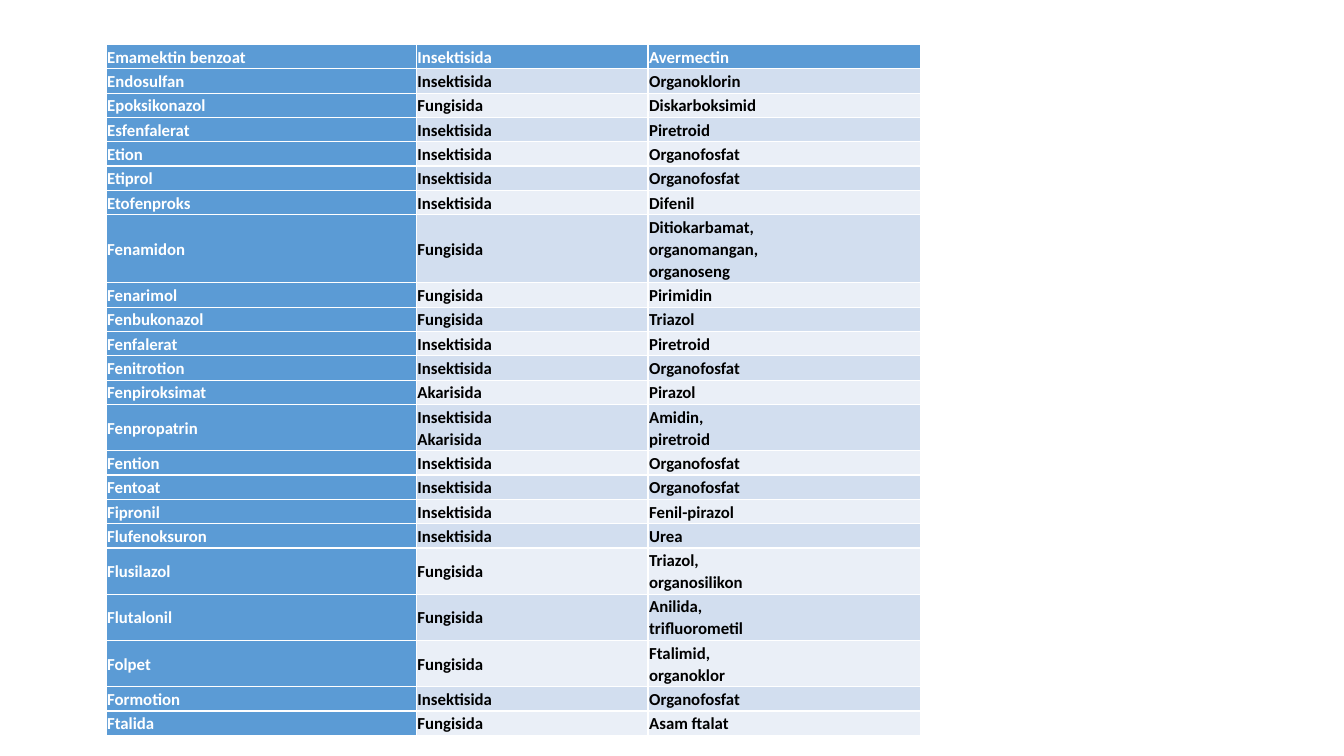
from pptx import Presentation
from pptx.dml.color import RGBColor
from pptx.enum.text import MSO_ANCHOR
from pptx.util import Cm, Pt

WHITE = RGBColor(0xFF, 0xFF, 0xFF)
BLACK = RGBColor(0x00, 0x00, 0x00)
BLUE = RGBColor(0x5B, 0x9B, 0xD5)
DARK_BAND = RGBColor(0xD2, 0xDE, 0xEF)
LIGHT_BAND = RGBColor(0xEA, 0xEF, 0xF7)

COLUMN_WIDTHS = (7.82, 5.84, 6.86)
FIRST_LINE_HEIGHT = 0.43
EXTRA_LINE_HEIGHT = 0.38
CELL_MARGIN = Cm(0.03)

PESTICIDES = [
    ("Emamektin benzoat", "Insektisida", "Avermectin"),
    ("Endosulfan", "Insektisida", "Organoklorin"),
    ("Epoksikonazol", "Fungisida", "Diskarboksimid"),
    ("Esfenfalerat", "Insektisida", "Piretroid"),
    ("Etion", "Insektisida", "Organofosfat"),
    ("Etiprol", "Insektisida", "Organofosfat"),
    ("Etofenproks", "Insektisida", "Difenil"),
    ("Fenamidon", "Fungisida", "Ditiokarbamat,\norganomangan,\norganoseng"),
    ("Fenarimol", "Fungisida", "Pirimidin"),
    ("Fenbukonazol", "Fungisida", "Triazol"),
    ("Fenfalerat", "Insektisida", "Piretroid"),
    ("Fenitrotion", "Insektisida", "Organofosfat"),
    ("Fenpiroksimat", "Akarisida", "Pirazol"),
    ("Fenpropatrin", "Insektisida\nAkarisida", "Amidin,\npiretroid"),
    ("Fention", "Insektisida", "Organofosfat"),
    ("Fentoat", "Insektisida", "Organofosfat"),
    ("Fipronil", "Insektisida", "Fenil-pirazol"),
    ("Flufenoksuron", "Insektisida", "Urea"),
    ("Flusilazol", "Fungisida", "Triazol,\norganosilikon"),
    ("Flutalonil", "Fungisida", "Anilida,\ntrifluorometil"),
    ("Folpet", "Fungisida", "Ftalimid,\norganoklor"),
    ("Formotion", "Insektisida", "Organofosfat"),
    ("Ftalida", "Fungisida", "Asam ftalat"),
]


def row_height(entry):
    extra_lines = max(text.count("\n") for text in entry)
    return Cm(FIRST_LINE_HEIGHT + EXTRA_LINE_HEIGHT * extra_lines)


def fill_cell(cell, text, background, color):
    cell.fill.solid()
    cell.fill.fore_color.rgb = background
    cell.vertical_anchor = MSO_ANCHOR.MIDDLE
    cell.margin_left = cell.margin_right = CELL_MARGIN
    cell.margin_top = cell.margin_bottom = CELL_MARGIN
    para = cell.text_frame.paragraphs[0]
    para.line_spacing = 1.07
    for number, line in enumerate(text.split("\n")):
        if number:
            para.add_line_break()
        span = para.add_run()
        span.text = line
        span.font.name = "Calibri"
        span.font.size = Pt(12)
        span.font.bold = True
        span.font.color.rgb = color


def add_pesticide_table(page, left, top):
    """The default table style supplies the white rules between cells."""
    heights = [row_height(entry) for entry in PESTICIDES]
    widths = [Cm(width) for width in COLUMN_WIDTHS]
    table = page.shapes.add_table(len(heights), len(widths), left, top,
                                  sum(widths), sum(heights)).table
    table.first_col = True
    for column, width in zip(table.columns, widths):
        column.width = width
    for row_number, entry in enumerate(PESTICIDES):
        table.rows[row_number].height = heights[row_number]
        band = DARK_BAND if row_number % 2 else LIGHT_BAND
        for column_number, text in enumerate(entry):
            heading = row_number == 0 or column_number == 0
            fill_cell(table.cell(row_number, column_number), text,
                      BLUE if heading else band, WHITE if heading else BLACK)


def main():
    deck = Presentation()
    deck.slide_width, deck.slide_height = Cm(33.87), Cm(19.05)
    page = deck.slides.add_slide(deck.slide_layouts[6])
    add_pesticide_table(page, Cm(2.67), Cm(1.12))
    deck.save("out.pptx")


if __name__ == "__main__":
    main()
